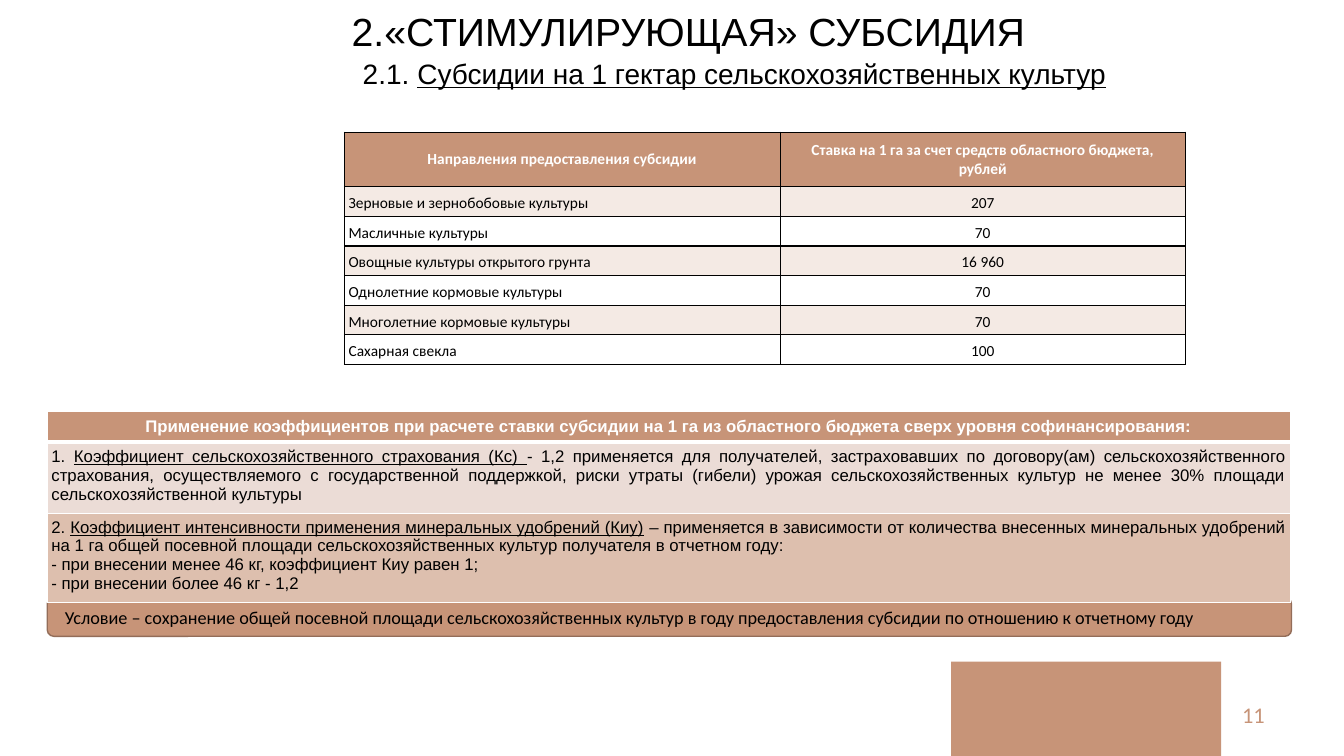
from lxml import etree
from pptx import Presentation
from pptx.dml.color import RGBColor
from pptx.enum.shapes import MSO_SHAPE
from pptx.enum.text import MSO_ANCHOR, PP_ALIGN
from pptx.oxml.ns import qn
from pptx.util import Pt

PX = 9525
LEFT, CENTER, RIGHT, JUSTIFY = PP_ALIGN.LEFT, PP_ALIGN.CENTER, PP_ALIGN.RIGHT, PP_ALIGN.JUSTIFY
TOP, MIDDLE = MSO_ANCHOR.TOP, MSO_ANCHOR.MIDDLE
RECTANGLE, ROUNDED = MSO_SHAPE.RECTANGLE, MSO_SHAPE.ROUNDED_RECTANGLE
COLORS = {
    "black": "000000",
    "white": "FFFFFF",
    "clay": "C79478",
    "clay_edge": "936D59",
    "cream": "F4EAE4",
    "blush": "EBDCD6",
    "sand": "DDBFAE",
}


def write(frame, paragraphs, align, size, font, color="black", bold=False, spacing=None):
    """Fill a text frame; each paragraph is a list of (text, underlined) pairs."""
    frame.word_wrap = True
    for index, pieces in enumerate(paragraphs):
        para = frame.paragraphs[0] if index == 0 else frame.add_paragraph()
        para.alignment = align
        if spacing:
            para.line_spacing = spacing
        for text, underlined in pieces:
            span = para.add_run()
            span.text = text
            look = {"name": font, "size": Pt(size), "bold": bold, "underline": underlined}
            for name, value in look.items():
                setattr(span.font, name, value)
            span.font.color.rgb = RGBColor.from_string(COLORS[color])


def style_cell(cell, fill, margins, anchor, border, widths=(1, 1, 1, 1)):
    """Set margins (side, vertical), borders (left, right, top, bottom) and fill."""
    side, vertical = margins
    cell.margin_left = cell.margin_right = side * PX
    cell.margin_top = cell.margin_bottom = vertical * PX
    cell.vertical_anchor = anchor
    properties = cell._tc.get_or_add_tcPr()
    for edge, width in zip(("lnL", "lnR", "lnT", "lnB"), widths):
        line = etree.SubElement(properties, qn(f"a:{edge}"), w=str(Pt(width)))
        paint = etree.SubElement(line, qn("a:solidFill"))
        etree.SubElement(paint, qn("a:srgbClr"), val=COLORS[border])
    cell.fill.solid()
    cell.fill.fore_color.rgb = RGBColor.from_string(COLORS[fill])


deck = Presentation()
deck.slide_width, deck.slide_height = 1280 * PX, 720 * PX
page = deck.slides.add_slide(deck.slide_layouts[6])

# Corner block and condition bar
blocks = {}
for name, kind, bounds, edge in [
    ("corner", RECTANGLE, (906, 630, 257, 90), None),
    ("condition", ROUNDED, (45, 569, 1185, 37), "clay_edge"),
]:
    block = page.shapes.add_shape(kind, *[value * PX for value in bounds])
    block.shadow.inherit = False
    block.fill.solid()
    block.fill.fore_color.rgb = RGBColor.from_string(COLORS["clay"])
    if edge:
        block.line.color.rgb = RGBColor.from_string(COLORS[edge])
        block.line.width = Pt(1)
    else:
        block.line.fill.background()
    blocks[name] = block

condition = blocks["condition"].text_frame
condition.vertical_anchor = MIDDLE
condition.margin_left = 15 * PX
write(condition, [[(
    "Условие – сохранение общей посевной площади сельскохозяйственных культур "
    "в году предоставления субсидии по отношению к отчетному году", False)]],
    JUSTIFY, 13, "Calibri")

# Title, subtitle and page number
for bounds, pieces, align, anchor, size, font, color in [
    ((202, 2, 907, 55), [("2.«СТИМУЛИРУЮЩАЯ» СУБСИДИЯ", False)],
     CENTER, TOP, 28, "Arial", "black"),
    ((202, 49, 995, 42),
     [("2.1. ", False), ("Субсидии на 1 гектар сельскохозяйственных культур", True)],
     CENTER, TOP, 20, "Arial", "black"),
    ((926, 662, 288, 38), [("11", False)], RIGHT, MIDDLE, 16, "Calibri", "clay"),
]:
    box = page.shapes.add_textbox(*[value * PX for value in bounds])
    box.text_frame.vertical_anchor = anchor
    write(box.text_frame, [pieces], align, size, font, color)

# Subsidy rates table
rates = [
    ("Направления предоставления субсидии",
     "Ставка на 1 га за счет средств областного бюджета, рублей"),
    ("Зерновые и зернобобовые культуры", "207"),
    ("Масличные культуры", "70"),
    ("Овощные культуры открытого грунта", "16 960"),
    ("Однолетние кормовые культуры", "70"),
    ("Многолетние кормовые культуры", "70"),
    ("Сахарная свекла", "100"),
]
rate_table = page.shapes.add_table(
    len(rates), 2, 328 * PX, 126 * PX, 801 * PX, 220 * PX).table
for column, width in zip(rate_table.columns, (415, 386)):
    column.width = width * PX
for row, texts in enumerate(rates):
    header = row == 0
    rate_table.rows[row].height = (52 if header else 28) * PX
    fill = "clay" if header else ("cream" if row % 2 else "white")
    for column, text in enumerate(texts):
        cell = rate_table.cell(row, column)
        style_cell(cell, fill, (8, 8) if header else (4, 4),
                   TOP if column else MIDDLE, "black")
        write(cell.text_frame, [[(text, False)]],
              CENTER if header or column else LEFT, 11, "Calibri",
              "white" if header else "black", header, None if header else 1.15)

# Coefficients table
coefficients = [
    (28, "clay", (10, 5), (1, 1, 1, 3), CENTER, [[(
        "Применение коэффициентов при расчете ставки субсидии на 1 га "
        "из областного бюджета сверх уровня софинансирования:", False)]]),
    (68, "blush", (4, 5), (1, 1, 3, 1), JUSTIFY, [[
        ("1. ", False),
        ("Коэффициент сельскохозяйственного страхования (Кс) ", True),
        ("- 1,2 применяется для получателей, застраховавших по договору(ам) "
         "сельскохозяйственного страхования, осуществляемого с государственной "
         "поддержкой, риски утраты (гибели) урожая сельскохозяйственных культур "
         "не менее 30% площади сельскохозяйственной культуры", False)]]),
    (83, "sand", (4, 4), (1, 1, 1, 1), JUSTIFY, [
        [("2. ", False),
         ("Коэффициент интенсивности применения минеральных удобрений (Киу)", True),
         (" – применяется в зависимости от количества внесенных минеральных "
          "удобрений на 1 га общей посевной площади сельскохозяйственных культур "
          "получателя в отчетном году:", False)],
        [("- при внесении менее 46 кг, коэффициент Киу равен 1;", False)],
        [("- при внесении более 46 кг - 1,2", False)]]),
]
coefficient_table = page.shapes.add_table(
    len(coefficients), 1, 45 * PX, 392 * PX, 1184 * PX, 179 * PX).table
for row, (height, fill, margins, widths, align, paragraphs) in enumerate(coefficients):
    header = row == 0
    coefficient_table.rows[row].height = height * PX
    cell = coefficient_table.cell(row, 0)
    style_cell(cell, fill, margins, TOP, "white", widths)
    write(cell.text_frame, paragraphs, align, 12, "Arial",
          "white" if header else "black", header)

deck.save("out.pptx")
